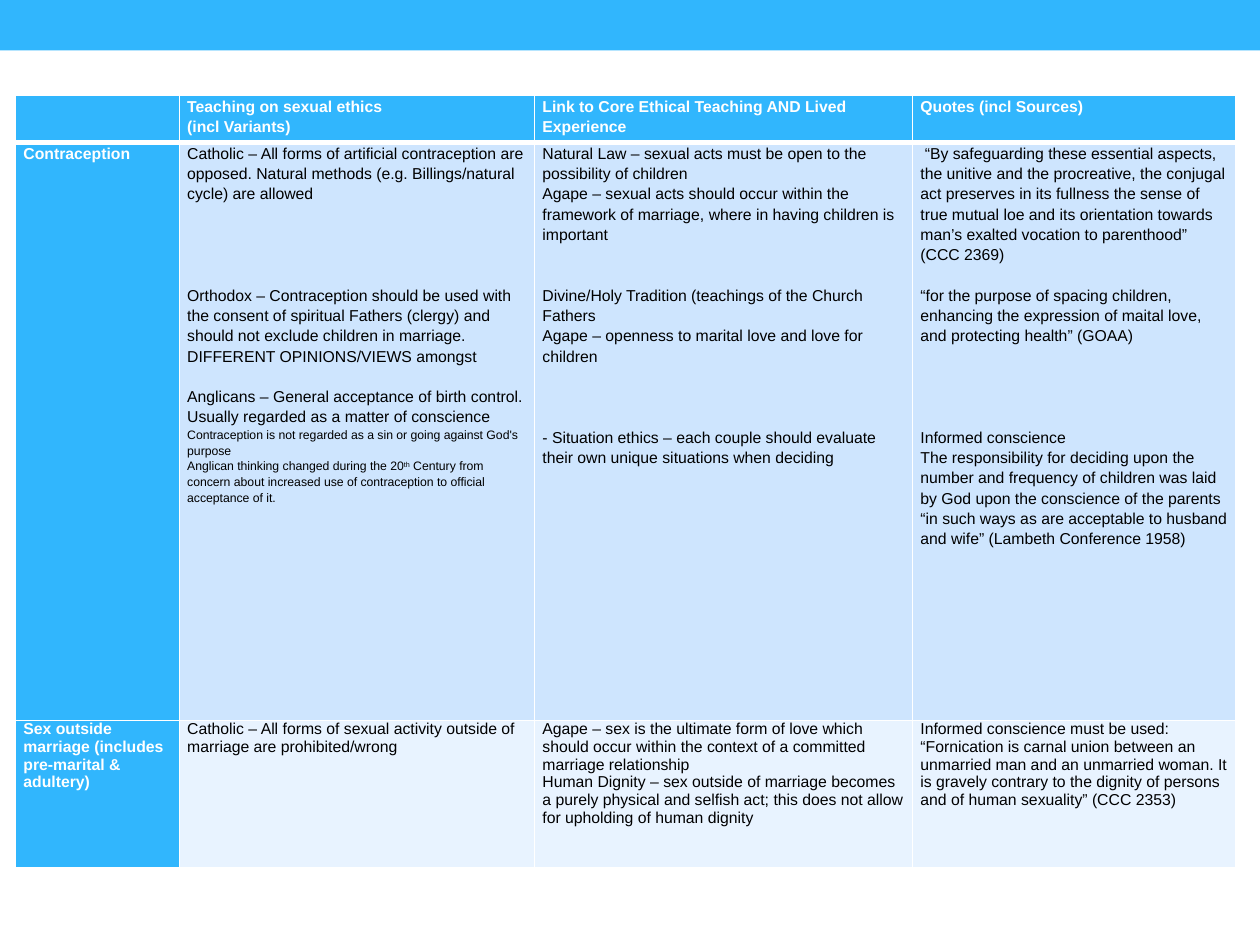
import pptx
import pptx.dml.color
import pptx.enum.shapes
import pptx.oxml.ns
import pptx.util
from lxml import etree

Pt = pptx.util.Pt
qn = pptx.oxml.ns.qn

BLUE, PALE, PALER = "31B6FD", "CEE5FE", "E8F3FF"
WHITE, BLACK = "FFFFFF", "000000"
LINE_PITCH = 11.6
COLUMN_WIDTHS = [93.6, 203, 216, 184.4]
ROW_HEIGHTS = [26.6, 330.5, 84.2]
ROW_FILLS = [BLUE, PALE, PALER]
ROW_SPACING = [1.15, 1.15, 1.0]

HEADINGS = [
    [""],
    ["Teaching on sexual ethics", "(incl Variants)"],
    ["Link to Core Ethical Teaching AND Lived Experience"],
    ["Quotes (incl Sources)"],
]
CONTRACEPTION = [
    ["Contraception"],
    [
        "Catholic – All forms of artificial contraception are opposed. "
        "Natural methods (e.g. Billings/natural cycle) are allowed",
        "Orthodox – Contraception should be used with the consent of spiritual Fathers "
        "(clergy) and should not exclude children in marriage. "
        "DIFFERENT OPINIONS/VIEWS amongst",
        "Anglicans – General acceptance of birth control. "
        "Usually regarded as a matter of conscience",
        "Contraception is not regarded as a sin or going against God's purpose",
        "Anglican thinking changed during the 20^th^ Century from concern about "
        "increased use of contraception to official acceptance of it.",
    ],
    [
        "Natural Law – sexual acts must be open to the possibility of children",
        "Agape – sexual acts should occur within the framework of marriage, "
        "where in having children is important",
        "Divine/Holy Tradition (teachings of the Church Fathers",
        "Agape – openness to marital love and love for children",
        "- Situation ethics – each couple should evaluate their own unique "
        "situations when deciding",
    ],
    [
        " “By safeguarding these essential aspects, the unitive and the procreative, "
        "the conjugal act preserves in its fullness the sense of true mutual loe and its "
        "orientation towards man’s exalted vocation to parenthood” (CCC 2369)",
        "“for the purpose of spacing children, enhancing the expression of maital love, "
        "and protecting health” (GOAA)",
        "Informed conscience",
        "The responsibility for deciding upon the number and frequency of children was "
        "laid by God upon the conscience of the parents “in such ways as are acceptable "
        "to husband and wife” (Lambeth Conference 1958)",
    ],
]
OUTSIDE_MARRIAGE = [
    ["Sex outside marriage (includes pre-marital & adultery)"],
    ["Catholic – All forms of sexual activity outside of marriage are prohibited/wrong"],
    [
        "Agape – sex is the ultimate form of love which should occur within the context "
        "of a committed marriage relationship",
        "Human Dignity – sex outside of marriage becomes a purely physical and selfish "
        "act; this does not allow for upholding of human dignity",
    ],
    [
        "Informed conscience must be used:",
        "“Fornication is carnal union between an unmarried man and an unmarried woman. "
        "It is gravely contrary to the dignity of persons and of human sexuality” (CCC 2353)",
    ],
]
ROWS = [HEADINGS, CONTRACEPTION, OUTSIDE_MARRIAGE]
LINES_BEFORE = {(1, 1, 1): 4, (1, 1, 2): 1, (1, 2, 2): 2, (1, 2, 4): 3,
                (1, 3, 1): 1, (1, 3, 2): 4}
SMALL_PARAGRAPHS = {(1, 1, 3), (1, 1, 4)}


def color(value):
    return pptx.dml.color.RGBColor.from_string(value)


def add_band(page, width, height):
    band = page.shapes.add_shape(
        pptx.enum.shapes.MSO_SHAPE.RECTANGLE, Pt(0), Pt(0), Pt(width), Pt(height))
    band.shadow.inherit = False
    band.fill.solid()
    band.fill.fore_color.rgb = color(BLUE)
    band.line.fill.background()


def set_borders(cell, widths):
    properties = cell._tc.get_or_add_tcPr()
    for side, width in widths.items():
        line = etree.SubElement(properties, qn("a:ln" + side), w=str(Pt(width)))
        fill = etree.SubElement(line, qn("a:solidFill"))
        etree.SubElement(fill, qn("a:srgbClr"), val=WHITE)


def write_paragraph(para, text, size, text_color, bold, spacing, lines_before):
    para.line_spacing = spacing
    para.space_before = Pt(lines_before * LINE_PITCH)
    para.font.name = "Arial"
    para.font.size = Pt(size)
    para.font.bold = bold
    para.font.color.rgb = color(text_color)
    for index, piece in enumerate(text.split("^")):
        span = para.add_run()
        span.text = piece
        if index % 2:
            span.font._element.set("baseline", "30000")


def fill_cell(cell, row, column):
    is_label = row == 0 or column == 0
    cell.margin_left = cell.margin_right = Pt(4.5)
    cell.margin_top = cell.margin_bottom = Pt(0)
    set_borders(cell, {"L": 1, "R": 1, "T": 3 if row == 1 else 1,
                       "B": 3 if row == 0 else 1})
    cell.fill.solid()
    cell.fill.fore_color.rgb = color(BLUE if is_label else ROW_FILLS[row])
    frame = cell.text_frame
    for index, text in enumerate(ROWS[row][column]):
        para = frame.add_paragraph() if index else frame.paragraphs[0]
        place = (row, column, index)
        write_paragraph(para, text, 7 if place in SMALL_PARAGRAPHS else 9,
                        WHITE if is_label else BLACK, is_label,
                        ROW_SPACING[row], LINES_BEFORE.get(place, 0))


def add_ethics_table(page, left, top):
    table = page.shapes.add_table(
        len(ROW_HEIGHTS), len(COLUMN_WIDTHS), Pt(left), Pt(top),
        Pt(sum(COLUMN_WIDTHS)), Pt(sum(ROW_HEIGHTS))).table
    table.horz_banding = False
    for column, width in zip(table.columns, COLUMN_WIDTHS):
        column.width = Pt(width)
    for row, height in enumerate(ROW_HEIGHTS):
        table.rows[row].height = Pt(height)
        for column in range(len(COLUMN_WIDTHS)):
            fill_cell(table.cell(row, column), row, column)


def main():
    deck = pptx.Presentation()
    deck.slide_width, deck.slide_height = Pt(720), Pt(540)
    page = deck.slides.add_slide(deck.slide_layouts[6])
    add_band(page, 720, 28.8)
    add_ethics_table(page, 8.9, 54.7)
    deck.save("out.pptx")


if __name__ == "__main__":
    main()
